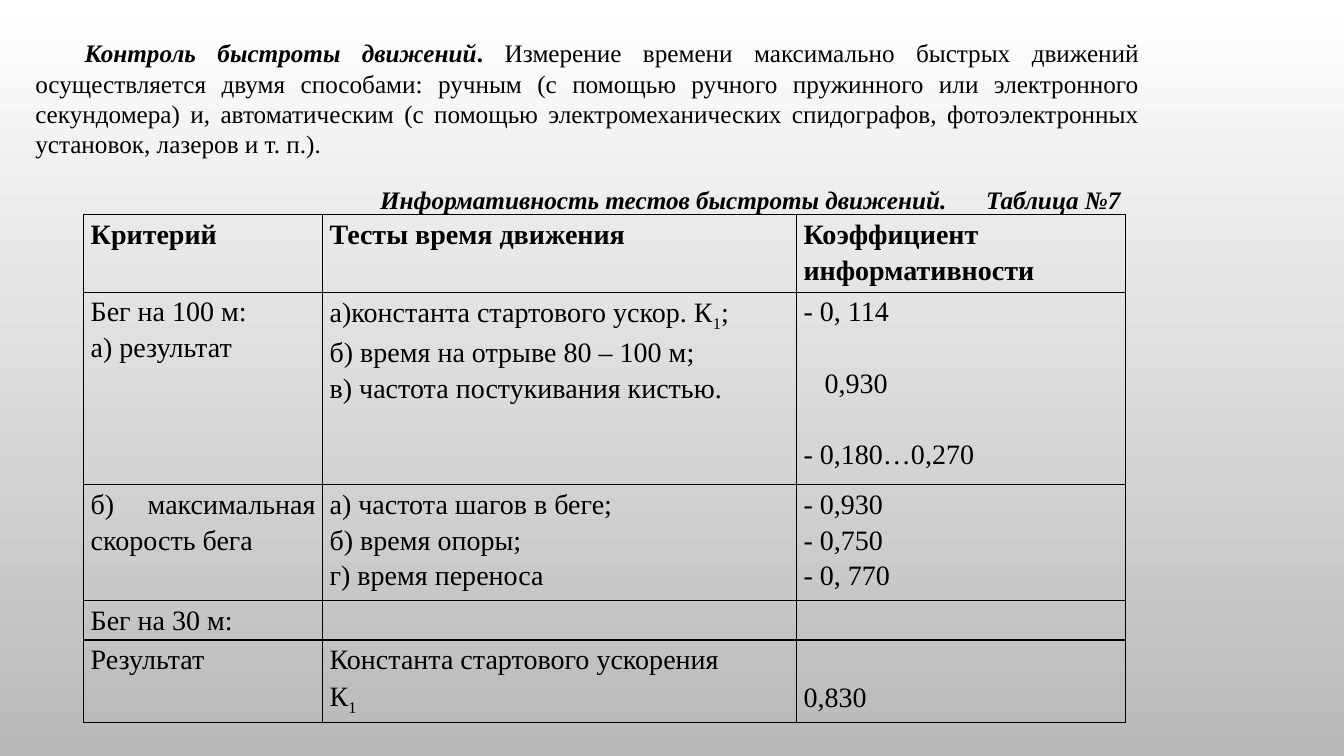
from lxml import etree
from pptx import Presentation
from pptx import util as u
from pptx.dml.color import RGBColor
from pptx.enum import text
from pptx.oxml import ns

LEAD = [
    ("Контроль быстроты движений", {"bold": True, "italic": True}),
    (".", {"bold": True}),
    (" Измерение времени максимально быстрых движений осуществляется двумя "
     "способами: ручным (с помощью ручного пружинного или электронного "
     "секундомера) и, автоматическим (с помощью электромеханических "
     "спидографов, фотоэлектронных установок, лазеров и т. п.).", {}),
]
TITLE = [("Информативность тестов быстроты движений.\tТаблица №7",
          {"bold": True, "italic": True})]

# Each cell is a list of lines; "_" puts the next sign below the line.
ROWS = [
    [["Критерий"], ["Тесты время движения"], ["Коэффициент информативности"]],
    [["Бег на 100 м:", "а) результат"],
     ["а)константа стартового ускор. К_1;", "б) время на отрыве 80 – 100 м;",
      "в) частота постукивания кистью."],
     ["- 0, 114", "0,930", "- 0,180…0,270"]],
    [["б) максимальная скорость бега"],
     ["а) частота шагов в беге;", "б) время опоры;", "г) время переноса"],
     ["- 0,930", "- 0,750", "- 0, 770"]],
    [["Бег на 30 м:"], [], []],
    [["Результат"], ["Константа стартового ускорения", "К_1"], ["0,830"]],
]
COLS = [2.37, 4.7, 3.26]
HIGH = [0.77, 1.91, 1.15, 0.39, 0.82]
GAPPED, LOW = (1, 2), (4, 2)  # cells with spaced lines, with text at the foot

THEME = {
    "font": "Times New Roman", "ink": RGBColor(0, 0, 0),
    "sky": [RGBColor(255, 255, 255), RGBColor(0xB9, 0xB9, 0xB9)],
    "text": u.Pt(18), "cell": u.Pt(20), "line": u.Pt(1),
    "lead": 1.15, "gap": u.Pt(25.5),
}


def apply(obj, **vals):
    for key, val in vals.items():
        setattr(obj, key, val)


def add_run(para, words, size, **style):
    run = para.add_run()
    run.text = words
    apply(run.font, **{"name": THEME["font"], "size": size, "bold": False,
                       "italic": False, **style})
    run.font.color.rgb = THEME["ink"]
    return run


def fill_box(box, place, runs, anchor, tab=None):
    """Move a placeholder and set one justified, first-line indented text."""
    apply(box, **dict(zip(("left", "top", "width", "height"),
                          map(u.Inches, place))))
    apply(box.text_frame, word_wrap=True, vertical_anchor=anchor,
          auto_size=text.MSO_AUTO_SIZE.NONE)
    para = box.text_frame.paragraphs[0]
    apply(para, alignment=text.PP_ALIGN.JUSTIFY, line_spacing=1.0,
          space_before=u.Pt(0))
    prop = para._p.get_or_add_pPr()
    prop.set("marL", "0")
    prop.set("indent", str(u.Inches(0.49)))
    etree.SubElement(prop, ns.qn("a:buNone"))
    if tab:
        tabs = etree.SubElement(prop, ns.qn("a:tabLst"))
        etree.SubElement(tabs, ns.qn("a:tab"), pos=str(u.Inches(tab)), algn="l")
    for words, style in runs:
        add_run(para, words, THEME["text"], **style)


def frame(cell):
    """Draw the four borders of a cell."""
    prop = cell._tc.get_or_add_tcPr()
    for spot, side in enumerate(("lnL", "lnR", "lnT", "lnB")):
        line = etree.Element(ns.qn("a:" + side), w=str(THEME["line"]))
        fill = etree.SubElement(line, ns.qn("a:solidFill"))
        etree.SubElement(fill, ns.qn("a:srgbClr"), val=str(THEME["ink"]))
        prop.insert(spot, line)


def fill_cell(cell, lines, bold, gapped):
    for num, line in enumerate(lines):
        body = cell.text_frame
        para = body.add_paragraph() if num else body.paragraphs[0]
        apply(para, alignment=text.PP_ALIGN.JUSTIFY,
              line_spacing=THEME["lead"])
        if gapped and num:
            para.space_before = THEME["gap"]
        if gapped and num == 1:
            para._p.get_or_add_pPr().set("marL", str(u.Inches(0.21)))
        base, *subs = line.split("_")
        add_run(para, base, THEME["cell"], bold=bold)
        for part in subs:
            low = add_run(para, part[0], THEME["cell"], bold=bold)
            low._r.get_or_add_rPr().set("baseline", "-25000")
            if part[1:]:
                add_run(para, part[1:], THEME["cell"], bold=bold)


def add_grid(slide):
    grid = slide.shapes.add_table(
        len(ROWS), len(COLS), u.Inches(0.83), u.Inches(2.13),
        u.Inches(sum(COLS)), u.Inches(sum(HIGH))).table
    apply(grid, first_row=False, horz_banding=False)
    for col, wide in zip(grid.columns, COLS):
        col.width = u.Inches(wide)
    for r, (row, high) in enumerate(zip(ROWS, HIGH)):
        grid.rows[r].height = u.Inches(high)
        for c, lines in enumerate(row):
            cell = grid.cell(r, c)
            apply(cell, margin_left=u.Inches(0.07), margin_right=u.Inches(0.07),
                  margin_top=0, margin_bottom=0)
            if (r, c) == LOW:
                apply(cell, vertical_anchor=text.MSO_ANCHOR.BOTTOM,
                      margin_bottom=u.Inches(0.09))
            cell.fill.background()
            frame(cell)
            fill_cell(cell, lines, r == 0, (r, c) == GAPPED)


def main():
    deck = Presentation()
    apply(deck, slide_width=u.Inches(13.33), slide_height=u.Inches(7.5))
    slide = deck.slides.add_slide(deck.slide_layouts[1])
    back = slide.background.fill
    back.gradient()
    back.gradient_angle = 270
    for stop, tone, at in zip(back.gradient_stops, THEME["sky"], (0, 1)):
        stop.color.rgb = tone
        stop.position = at
    fill_box(slide.placeholders[1], (0.25, 0.32, 11.15, 1.31), LEAD,
             text.MSO_ANCHOR.MIDDLE)
    fill_box(slide.shapes.title, (3.18, 1.78, 8.23, 0.4), TITLE,
             text.MSO_ANCHOR.TOP, tab=6.6)
    add_grid(slide)
    deck.save("out.pptx")


if __name__ == "__main__":
    main()
